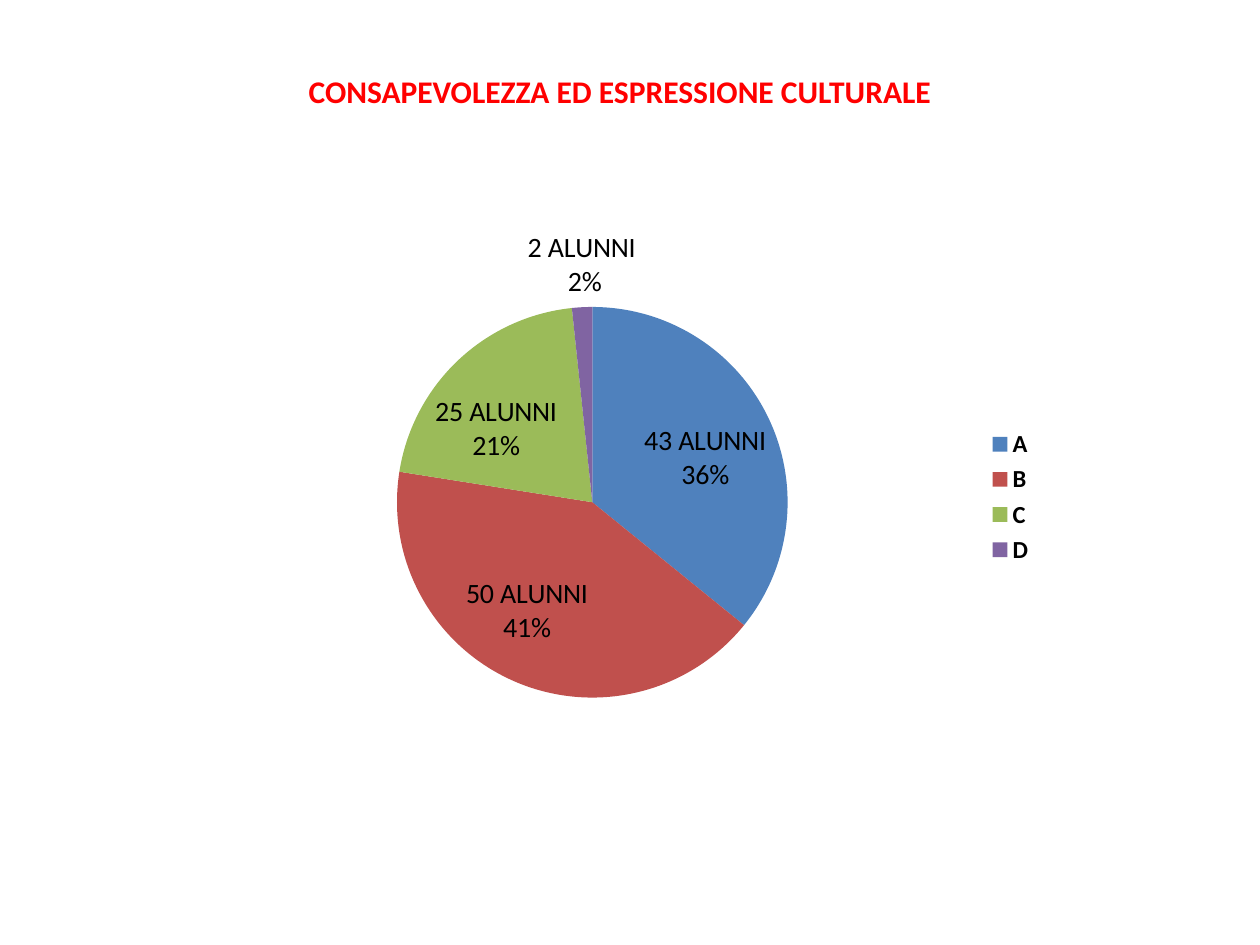
from dataclasses import dataclass

from lxml.etree import SubElement
from pptx import Presentation
from pptx.chart.data import CategoryChartData
from pptx.dml.color import RGBColor
from pptx.enum.chart import XL_CHART_TYPE as ChartType
from pptx.enum.chart import XL_LABEL_POSITION as LabelPosition
from pptx.enum.chart import XL_LEGEND_POSITION as LegendPosition
from pptx.enum.text import PP_ALIGN as Align
from pptx.oxml import parse_xml
from pptx.oxml.ns import nsdecls, qn
from pptx.util import Emu, Pt

TITLE = "CONSAPEVOLEZZA ED ESPRESSIONE CULTURALE"
# grade, pupils, label, slice colour, label position, label shift in px
GRADES = [
    ("A", 43, "43 ALUNNI 36%", "4F81BD", LabelPosition.CENTER, (25, -2)),
    ("B", 50, "50 ALUNNI 41%", "C0504D", LabelPosition.CENTER, (-26, 20)),
    ("C", 25, "25 ALUNNI 21%", "9BBB59", LabelPosition.CENTER, (-29, -2)),
    ("D", 2, "2 ALUNNI\n 2%", "8064A2", LabelPosition.OUTSIDE_END, (0, 0)),
]

SLIDE = (1260, 945)
TITLE_BOX = (273, 66, 694, 50)
CHART_BOX = (194, 214, 853, 566)
PIE_BOX = (203, 93, 391, 391)  # inside the chart


@dataclass(frozen=True)
class Theme:
    font: str = "Calibri"
    title: str = "FF0000"
    text: str = "000000"
    title_size: int = 18
    label_size: int = 16
    legend_size: int = 14
    chart_size: int = 10


THEME = Theme()


def px(*lengths):
    return [Emu(length * 914400 // 126) for length in lengths]


def style(font, size, color, bold=False):
    font.name = THEME.font
    font.size = Pt(size)
    font.bold = bold
    font.color.rgb = RGBColor.from_string(color)


def manual_layout(**settings):
    layout = parse_xml(f"<c:layout {nsdecls('c')}><c:manualLayout/></c:layout>")
    for name, value in settings.items():
        SubElement(layout[0], qn(f"c:{name}")).set("val", str(value))
    return layout


def add_title(page):
    box = page.shapes.add_textbox(*px(*TITLE_BOX))
    box.text_frame.word_wrap = True
    para = box.text_frame.paragraphs[0]
    para.text = TITLE
    para.alignment = Align.CENTER
    style(para.runs[0].font, THEME.title_size, THEME.title, bold=True)


def place_pie(chart):
    width, height = CHART_BOX[2:]
    x, y, w, h = PIE_BOX
    layout = manual_layout(
        layoutTarget="inner", xMode="edge", yMode="edge",
        x=round(x / width, 3), y=round(y / height, 3),
        w=round(w / width, 3), h=round(h / height, 3),
    )
    plot_area = chart.plots[0]._element.getparent()
    for old in plot_area.findall(qn("c:layout")):
        plot_area.remove(old)
    plot_area.insert(0, layout)


def format_slices(series):
    labels = series.data_labels
    labels.show_value = True
    labels.show_percentage = True
    style(labels.font, THEME.label_size, THEME.text, bold=True)
    for index, (_, _, text, color, position, _) in enumerate(GRADES):
        point = series.points[index]
        point.format.fill.solid()
        point.format.fill.fore_color.rgb = RGBColor.from_string(color)
        label = point.data_label
        label.text_frame.text = text
        for para in label.text_frame.paragraphs:
            style(para.runs[0].font, THEME.label_size, THEME.text)
        label.position = position


def shift_labels(series):
    width, height = CHART_BOX[2:]
    labels = series._element.xpath(".//c:dLbl")
    for label, (*_, (dx, dy)) in zip(labels, GRADES):
        label.find(qn("c:showPercent")).set("val", "1")
        for old in label.findall(qn("c:layout")):
            label.remove(old)
        if dx or dy:
            label.insert(1, manual_layout(x=round(dx / width, 3), y=round(dy / height, 3)))
    for leader in series._element.xpath(".//c:showLeaderLines"):
        leader.set("val", "0")


def add_grades_chart(page):
    data = CategoryChartData()
    data.categories = [grade[0] for grade in GRADES]
    data.add_series("Series 1", [grade[1] for grade in GRADES])
    chart = page.shapes.add_chart(ChartType.PIE, *px(*CHART_BOX), data).chart
    chart.has_title = False
    style(chart.font, THEME.chart_size, THEME.text)
    chart.plots[0].vary_by_categories = True
    chart.has_legend = True
    chart.legend.position = LegendPosition.RIGHT
    chart.legend.include_in_layout = False
    style(chart.legend.font, THEME.legend_size, THEME.text, bold=True)
    series = chart.plots[0].series[0]
    format_slices(series)
    shift_labels(series)
    place_pie(chart)


def main():
    deck = Presentation()
    deck.slide_width, deck.slide_height = px(*SLIDE)
    page = deck.slides.add_slide(deck.slide_layouts[6])
    add_title(page)
    add_grades_chart(page)
    deck.save("out.pptx")


if __name__ == "__main__":
    main()
